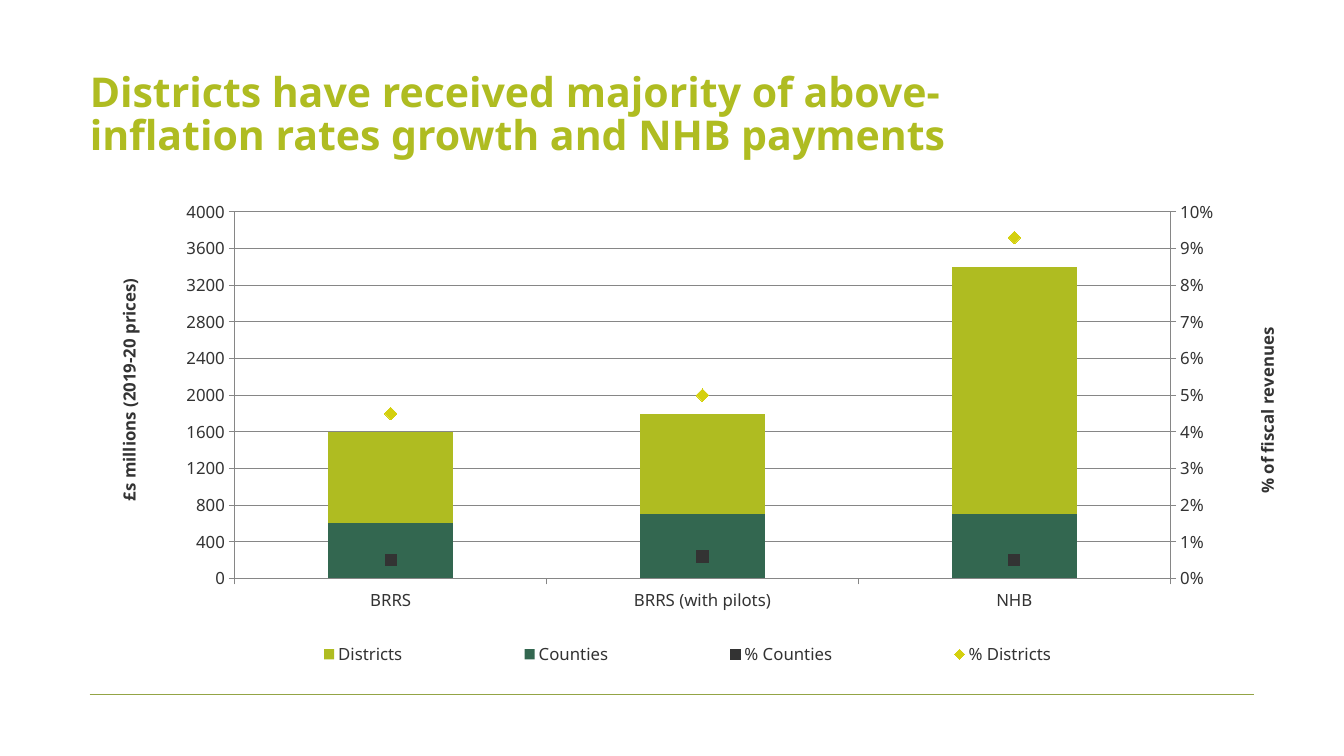
import copy

import pptx
import pptx.chart.axis
import pptx.chart.data
import pptx.dml.color
import pptx.enum.chart
import pptx.enum.shapes
import pptx.enum.text
import pptx.oxml
import pptx.oxml.ns
import pptx.util

Inches = pptx.util.Inches
Pt = pptx.util.Pt
qn = pptx.oxml.ns.qn
FONT = "Noto Sans"
COLOURS = {
    name: pptx.dml.color.RGBColor.from_string(value)
    for name, value in {
        "lime": "AFBC21", "green": "336750", "yellow": "D4D00E",
        "text": "333333", "grid": "868686", "rule": "93A445",
    }.items()
}


def chart_xml(tag, content=""):
    return pptx.oxml.parse_xml(
        f'<c:{tag} {pptx.oxml.ns.nsdecls("c")}>{content}</c:{tag}>')


def set_layout(parent, index, **settings):
    """Give a chart part a manual layout, as its child number index."""
    for old in parent.findall(qn("c:layout")):
        parent.remove(old)
    content = "".join(f'<c:{key} val="{value}"/>' for key, value in settings.items())
    parent.insert(index, chart_xml("layout", f"<c:manualLayout>{content}</c:manualLayout>"))


deck = pptx.Presentation()
deck.slide_width = Inches(13.33)
deck.slide_height = Inches(7.5)
page = deck.slides.add_slide(deck.slide_layouts[5])

# Title and bottom rule
title = page.shapes.title
title.left, title.top, title.width, title.height = map(Inches, (0.89, 0.65, 9.55, 1))
frame = title.text_frame
frame.word_wrap = True
frame.auto_size = pptx.enum.text.MSO_AUTO_SIZE.NONE
frame.vertical_anchor = pptx.enum.text.MSO_ANCHOR.MIDDLE
frame.margin_left = frame.margin_top = frame.margin_right = frame.margin_bottom = 0
para = frame.paragraphs[0]
para.alignment = pptx.enum.text.PP_ALIGN.LEFT
para.line_spacing = 0.88
span = para.add_run()
span.text = "Districts have received majority of above-inflation rates growth and NHB payments"
span.font.name = FONT
span.font.size = Pt(29.3)
span.font.bold = True
span.font.color.rgb = COLOURS["lime"]

rule = page.shapes.add_connector(
    pptx.enum.shapes.MSO_CONNECTOR.STRAIGHT,
    Inches(0.89), Inches(6.89), Inches(12.44), Inches(6.89))
rule.line.color.rgb = COLOURS["rule"]
rule.line.width = Pt(0.75)
rule._element.spPr.append(
    pptx.oxml.parse_xml(f'<a:effectLst {pptx.oxml.ns.nsdecls("a")}/>'))

# Stacked columns
data = pptx.chart.data.CategoryChartData()
data.categories = ["BRRS", "BRRS (with pilots)", "NHB"]
data.add_series("Counties", [600, 700, 700])
data.add_series("Districts", [1000, 1100, 2700])
data.add_series("% Counties", [0.005, 0.006, 0.005], "0%")
data.add_series("% Districts", [0.045, 0.05, 0.093], "0%")
chart = page.shapes.add_chart(
    pptx.enum.chart.XL_CHART_TYPE.COLUMN_STACKED,
    Inches(1), Inches(1.86), Inches(11.76), Inches(4.85), data).chart
chart.has_title = False
chart.font.name = FONT
chart.font.size = Pt(12)
chart.font.color.rgb = COLOURS["text"]
columns = chart.plots[0]
columns.gap_width = 150
columns.overlap = 100
columns.vary_by_categories = False
for series, colour in zip(columns.series, ("green", "lime")):
    series.format.fill.solid()
    series.format.fill.fore_color.rgb = COLOURS[colour]

# Left and bottom axes
amounts = chart.value_axis
amounts.minimum_scale, amounts.maximum_scale, amounts.major_unit = 0, 4000, 400
amounts.has_major_gridlines = True
amounts.major_gridlines.format.line.color.rgb = COLOURS["grid"]
amounts.tick_labels.number_format = "General"
amounts.tick_labels.number_format_is_linked = False
for axis in (amounts, chart.category_axis):
    axis.major_tick_mark = pptx.enum.chart.XL_TICK_MARK.OUTSIDE
    axis.format.line.color.rgb = COLOURS["grid"]

# Percentages as markers on a second pair of axes
bars = columns._element
plot_area = bars.getparent()
lines = chart_xml("lineChart", '<c:grouping val="standard"/><c:varyColors val="0"/>')
for series in bars.findall(qn("c:ser"))[2:]:
    for bar_only in series.findall(qn("c:invertIfNegative")):
        series.remove(bar_only)
    lines.append(series)
lines.append(chart_xml("marker"))
lines[-1].set("val", "1")
bars.addnext(lines)

second_axes = [copy.deepcopy(axis._element) for axis in (chart.category_axis, amounts)]
axis_ids = ["50010", "50020"]
last_axis = amounts._element
for element, own, other in zip(second_axes, axis_ids, reversed(axis_ids)):
    element.find(qn("c:axId")).set("val", own)
    element.find(qn("c:crossAx")).set("val", other)
    lines.append(chart_xml("axId"))
    lines[-1].set("val", own)
    last_axis.addnext(element)
    last_axis = element
pptx.chart.axis.CategoryAxis(second_axes[0]).visible = False
second_axes[1].find(qn("c:crosses")).set("val", "max")
shares = pptx.chart.axis.ValueAxis(second_axes[1])
shares.has_major_gridlines = False
shares.minimum_scale, shares.maximum_scale, shares.major_unit = 0, 0.1, 0.01
shares.tick_labels.number_format = "0%"

markers = [
    (pptx.enum.chart.XL_MARKER_STYLE.SQUARE, 8, "text"),
    (pptx.enum.chart.XL_MARKER_STYLE.DIAMOND, 9, "yellow"),
]
for series, (style, size, colour) in zip(chart.plots[1].series, markers):
    series.smooth = False
    series.format.line.fill.background()
    series.marker.style = style
    series.marker.size = size
    series.marker.format.fill.solid()
    series.marker.format.fill.fore_color.rgb = COLOURS[colour]
    series.marker.format.line.fill.background()

# Axis titles, plot area and legend
for axis, text, left, top in [
    (amounts, "£s millions (2019-20 prices)", 0.01, 0.18),
    (shares, "% of fiscal revenues", 0.97, 0.28),
]:
    axis.has_title = True
    para = axis.axis_title.text_frame.paragraphs[0]
    span = para.add_run()
    span.text = text
    span.font.name = FONT
    span.font.size = Pt(12)
    span.font.bold = True
    span.font.color.rgb = COLOURS["text"]
    heading = axis.axis_title._element
    body = next(heading.iter(qn("a:bodyPr")))
    body.set("rot", "-5400000")
    body.set("vert", "horz")
    set_layout(heading, 1, xMode="edge", yMode="edge", x=left, y=top)

set_layout(plot_area, 0, layoutTarget="inner", xMode="edge", yMode="edge",
           x=0.113, y=0.05, w=0.789, h=0.75)
chart.has_legend = True
legend = chart.legend
legend.position = pptx.enum.chart.XL_LEGEND_POSITION.RIGHT
legend.include_in_layout = False
legend.font.name = FONT
legend.font.size = Pt(12)
legend.font.color.rgb = COLOURS["text"]
set_layout(legend._element, 1, xMode="edge", yMode="edge", x=0.09, y=0.92, w=0.81, h=0.07)

deck.save("out.pptx")
